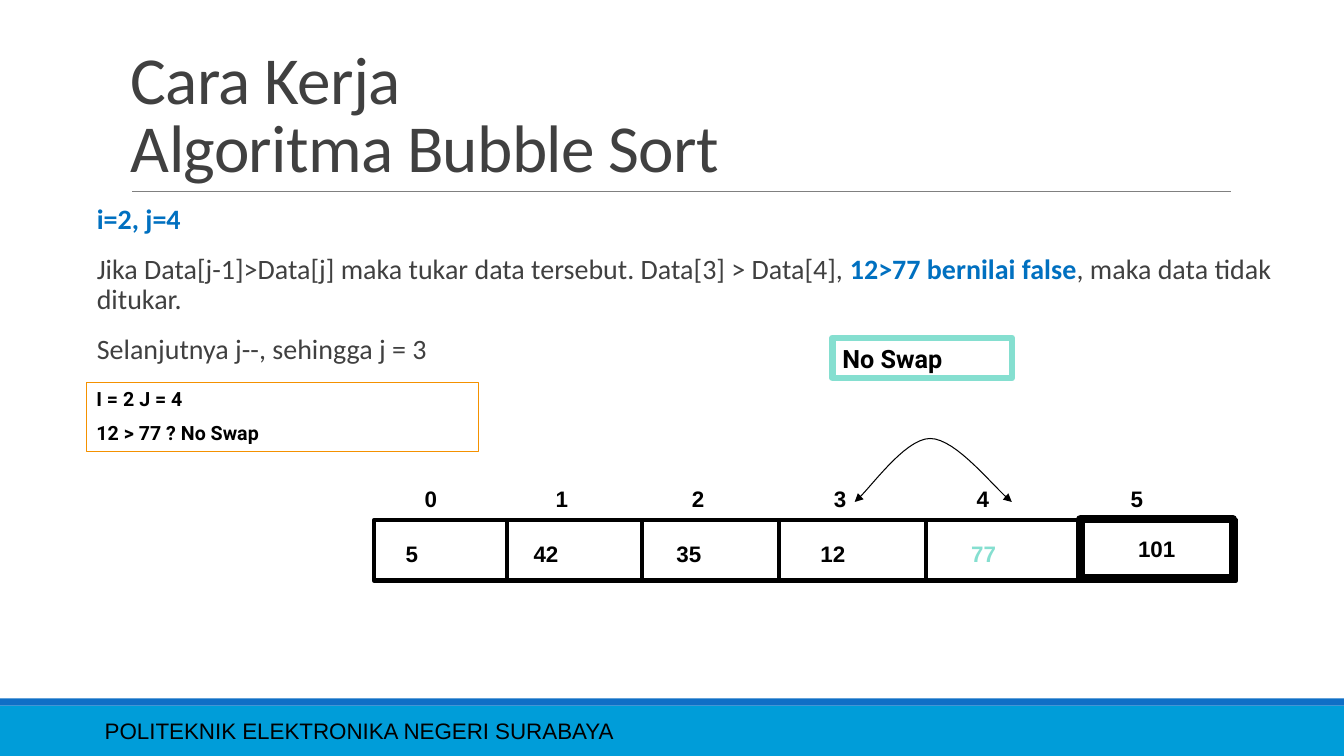
from dataclasses import dataclass

from lxml.etree import SubElement
from pptx import Presentation
from pptx.dml.color import RGBColor
from pptx.enum.shapes import MSO_CONNECTOR, MSO_SHAPE
from pptx.enum.text import MSO_ANCHOR, PP_ALIGN
from pptx.oxml.ns import qn
from pptx.util import Cm, Pt


@dataclass(frozen=True)
class Theme:
    """Colours, fonts and type sizes of the slide."""
    black: str = "000000"
    text: str = "404040"
    rule: str = "808080"
    band: str = "009DD9"
    stripe: str = "0F6FC6"
    accent: str = "0070C0"
    orange: str = "F49100"
    mint: str = "85DFD0"
    sans: str = "Calibri"
    plain: str = "Arial"
    label: str = "Roboto"
    title_size: int = 48
    body_size: int = 20
    badge_size: int = 18
    cell_size: int = 16
    trace_size: int = 14


THEME = Theme()


def colour(code):
    """Turn a hexadecimal code into a colour."""
    return RGBColor.from_string(code)


def add_run(paragraph, text, *, size, font, color, bold=False, spacing=None):
    """Append one formatted run to a paragraph."""
    run = paragraph.add_run()
    run.text = text
    run.font.size, run.font.name, run.font.bold = Pt(size), font, bold
    run.font.color.rgb = colour(color)
    if spacing is not None:
        run.font._element.set("spc", str(round(spacing * 100)))


def write_text(shape, paragraphs, *, align=PP_ALIGN.LEFT, anchor=MSO_ANCHOR.TOP, wrap=True,
               side=0.25, line_spacing=1.0, before=0, after=0, **run_format):
    """Fill a shape with paragraphs, each a list of (text, run format) pairs."""
    frame = shape.text_frame
    frame.word_wrap, frame.vertical_anchor = wrap, anchor
    frame.margin_left = frame.margin_right = Cm(side)
    frame.margin_top = frame.margin_bottom = Cm(0.13)
    for index, runs in enumerate(paragraphs):
        paragraph = frame.add_paragraph() if index else frame.paragraphs[0]
        paragraph.alignment, paragraph.line_spacing = align, line_spacing
        paragraph.space_before, paragraph.space_after = Pt(before if index else 0), Pt(after)
        for text, changes in runs:
            for number, part in enumerate(text.split("\n")):
                if number:
                    paragraph.add_line_break()
                add_run(paragraph, part, **{**run_format, **changes})


def add_text(slide, box, text, **text_format):
    """Place a text box holding a string or a list of paragraphs."""
    shape = slide.shapes.add_textbox(*map(Cm, box))
    write_text(shape, [[(text, {})]] if isinstance(text, str) else text, **text_format)


def style_shape(shape, fill=None, line=None, width=1.0):
    """Set fill and outline of a shape and drop its shadow."""
    shape.shadow.inherit = False
    if fill:
        shape.fill.solid()
        shape.fill.fore_color.rgb = colour(fill)
    else:
        shape.fill.background()
    if line:
        shape.line.color.rgb, shape.line.width = colour(line), Pt(width)
    else:
        shape.line.fill.background()


def add_rectangle(slide, box, **style):
    """Place a rectangle."""
    shape = slide.shapes.add_shape(MSO_SHAPE.RECTANGLE, *map(Cm, box))
    style_shape(shape, **style)
    return shape


def add_line(slide, start, end, color, width):
    """Draw a straight line without a shadow."""
    line = slide.shapes.add_connector(MSO_CONNECTOR.STRAIGHT, *map(Cm, start + end))
    line.line.color.rgb, line.line.width = colour(color), Pt(width)
    SubElement(line._element.spPr, qn("a:effectLst"))


def add_footer(slide, box):
    """Draw the coloured footer band with the institution name."""
    left, top, width, height = box
    add_rectangle(slide, box, fill=THEME.band)
    add_rectangle(slide, (left, top - 0.18, width, 0.18), fill=THEME.stripe)
    add_text(slide, (left + 2.39, top + 0.13, 21.36, 1.02), "POLITEKNIK ELEKTRONIKA NEGERI SURABAYA",
             anchor=MSO_ANCHOR.MIDDLE, size=THEME.cell_size, font=THEME.plain, color=THEME.black)


def add_title(slide, box):
    """Write the title and the rule under it."""
    left, top, width, height = box
    add_line(slide, (left + 0.28, top + height), (left + width, top + height), THEME.rule, 0.5)
    add_text(slide, box, "Cara Kerja\nAlgoritma Bubble Sort", anchor=MSO_ANCHOR.BOTTOM, line_spacing=0.85,
             size=THEME.title_size, font=THEME.sans, color=THEME.text, spacing=-0.5)


def add_explanation(slide, box):
    """Write the comparison step in words."""
    strong = {"color": THEME.accent, "bold": True}
    paragraphs = [
        [("i=2, j=4", strong)],
        [("Jika Data[j-1]>Data[j] maka tukar data tersebut. Data[3] > Data[4], ", {}),
         ("12>77 bernilai false", strong), (", maka data tidak ditukar.", {})],
        [("Selanjutnya j--, sehingga j = 3", {})],
    ]
    add_text(slide, box, paragraphs, side=0, line_spacing=0.9, before=12, after=2,
             size=THEME.body_size, font=THEME.sans, color=THEME.text)


def add_note(slide, box, lines, line, width, size):
    """Draw an outlined box with bold lines of text."""
    shape = add_rectangle(slide, box, line=line, width=width)
    write_text(shape, [[(text, {})] for text in lines], before=size / 2,
               size=size, font=THEME.label, color=THEME.black, bold=True)


def add_array(slide, box):
    """Draw the array cells with their indices and values."""
    left, top, width, height = box
    cell_format = dict(align=PP_ALIGN.CENTER, size=THEME.cell_size, font=THEME.plain, bold=True)
    add_rectangle(slide, box, line=THEME.black, width=3)
    for offset in (3.36, 6.76, 10.21, 13.92, 17.76):
        add_line(slide, (left + offset, top), (left + offset, top + height), THEME.black, 3)
    sorted_cell = add_rectangle(slide, (left + 17.81, top - 0.03, 3.84, 1.5), line=THEME.black, width=6)
    write_text(sorted_cell, [[("101", {})]], anchor=MSO_ANCHOR.MIDDLE, wrap=False,
               color=THEME.black, **cell_format)
    for index, center in enumerate((1.44, 4.74, 8.17, 11.75, 15.35, 19.23)):
        add_text(slide, (left + center - 0.75, top - 1.02, 1.5, 0.94), str(index),
                 color=THEME.black, **cell_format)
    values = (("5", 0.96), ("42", 4.34), ("35", 7.94), ("12", 11.57), ("77", 15.37))
    for value, center in values:
        add_text(slide, (left + center - 0.75, top + 0.36, 1.5, 0.94), value,
                 color=THEME.mint if value == "77" else THEME.black, **cell_format)


def bezier(points, steps=16):
    """Return points along a cubic curve, without its start."""
    def blend(axis, t):
        a, b, c, d = (point[axis] for point in points)
        return a * (1 - t) ** 3 + 3 * b * t * (1 - t) ** 2 + 3 * c * t * t * (1 - t) + d * t ** 3
    return [(blend(0, step / steps), blend(1, step / steps)) for step in range(1, steps + 1)]


def add_swap_arrow(slide, box):
    """Draw the two-headed arch between the compared cells."""
    left, top, width, height = box
    start, peak, end = (0, height), (0.48 * width, 0), (width, height)
    curve = bezier((start, (0.33, 1.35), (1.24, 0), peak)) + bezier((peak, (2.57, 0), (3.53, 1.27), end))
    builder = slide.shapes.build_freeform(Cm(left), Cm(top + height))
    builder.add_line_segments([(Cm(left + x), Cm(top + y)) for x, y in curve], close=False)
    arch = builder.convert_to_shape()
    style_shape(arch, line=THEME.black, width=0.75)
    for tag in ("a:headEnd", "a:tailEnd"):
        SubElement(arch.line._get_or_add_ln(), qn(tag), type="triangle")


def main():
    """Build the slide and save it."""
    presentation = Presentation()
    presentation.slide_width, presentation.slide_height = Cm(33.87), Cm(19.05)
    slide = presentation.slides.add_slide(presentation.slide_layouts[6])
    add_footer(slide, (0, 17.78, 33.87, 1.27))
    add_title(slide, (3.05, 0.79, 27.96, 4.04))
    add_explanation(slide, (2.44, 5.05, 30.22, 5.08))
    add_note(slide, (2.18, 9.63, 9.88, 1.75), ("I = 2 J = 4", "12 > 77 ? No Swap"),
             THEME.orange, 0.75, THEME.trace_size)
    add_note(slide, (20.98, 8.51, 4.52, 1.02), ("No Swap",), THEME.mint, 4.5, THEME.badge_size)
    add_swap_arrow(slide, (21.54, 11.05, 3.96, 1.6))
    add_array(slide, (9.42, 13.11, 21.74, 1.52))
    presentation.save("out.pptx")


if __name__ == "__main__":
    main()
